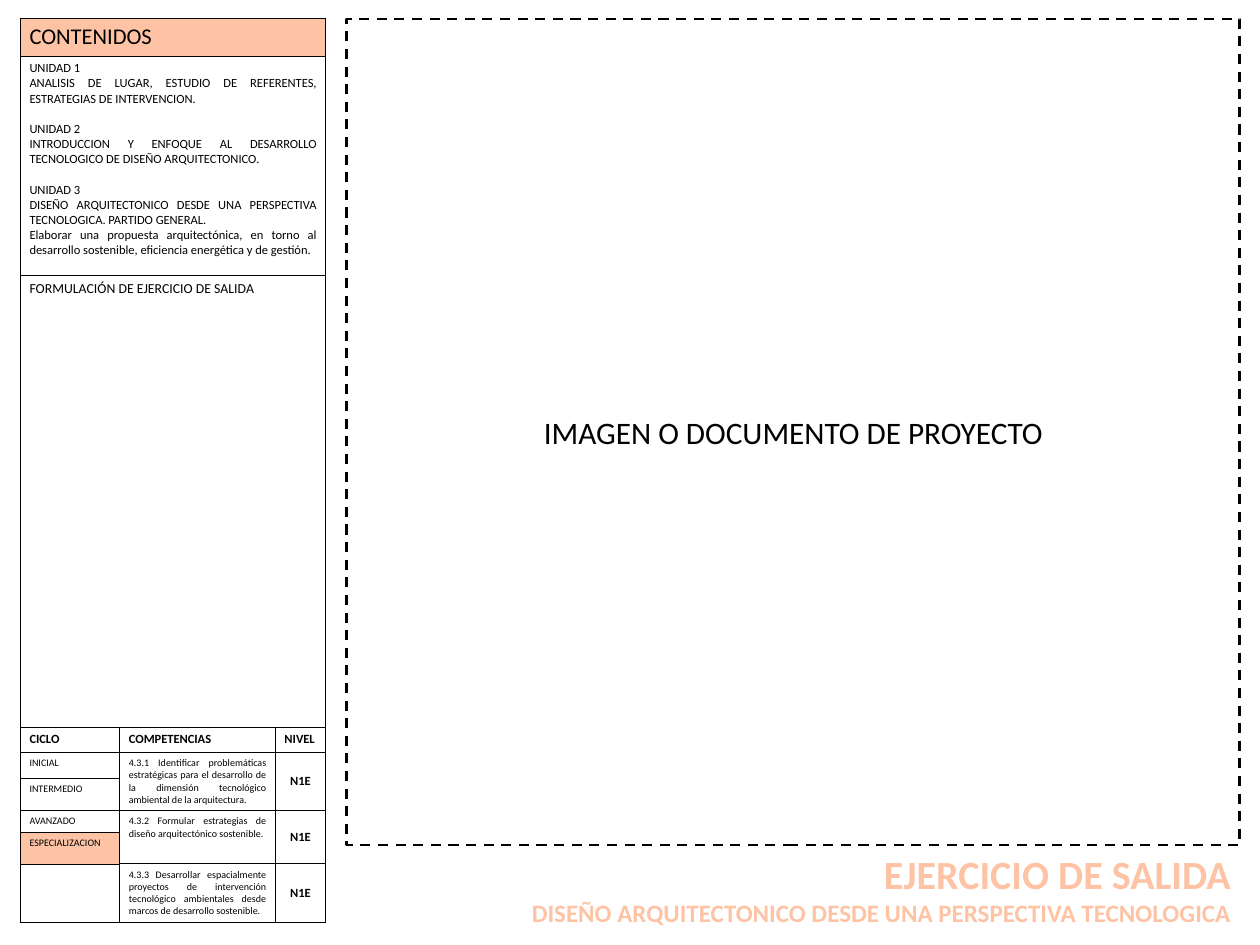
from dataclasses import dataclass
from typing import Optional

from lxml.etree import SubElement
from pptx import Presentation
from pptx.dml.color import RGBColor
from pptx.enum.dml import MSO_LINE
from pptx.enum.shapes import MSO_SHAPE
from pptx.enum.text import MSO_ANCHOR, PP_ALIGN
from pptx.oxml.ns import qn
from pptx.util import Pt

BLACK = "000000"
PEACH = "FDC3A4"
FONT = "Calibri"
UNIT_GAP = 12.2


@dataclass
class Line:
    text: str
    size: float
    bold: bool = False
    align: PP_ALIGN = PP_ALIGN.JUSTIFY
    color: str = BLACK
    space_before: float = 0


@dataclass
class CellContent:
    row: int
    column: int
    lines: list[Line]
    row_span: int = 1
    column_span: int = 1
    fill: Optional[str] = None
    anchor: MSO_ANCHOR = MSO_ANCHOR.TOP


def rgb(value: str) -> RGBColor:
    return RGBColor.from_string(value)


def write_lines(text_frame, lines: list[Line]) -> None:
    for index, line in enumerate(lines):
        paragraph = text_frame.paragraphs[0] if index == 0 else text_frame.add_paragraph()
        paragraph.text = line.text
        paragraph.alignment = line.align
        paragraph.space_before = Pt(line.space_before)
        paragraph.font.name = FONT
        paragraph.font.size = Pt(line.size)
        paragraph.font.bold = line.bold
        paragraph.font.color.rgb = rgb(line.color)


def set_borders(cell, top: float, bottom: float) -> None:
    properties = cell._tc.get_or_add_tcPr()
    sides = {"a:lnL": 1, "a:lnR": 1, "a:lnT": top, "a:lnB": bottom}
    for position, (tag, width) in enumerate(sides.items()):
        border = SubElement(properties, qn(tag), w=str(int(Pt(width))))
        fill = SubElement(border, qn("a:solidFill"))
        SubElement(fill, qn("a:srgbClr"), val=BLACK)
        properties.insert(position, border)


def fill_cell(table, content: CellContent) -> None:
    cell = table.cell(content.row, content.column)
    if content.row_span > 1 or content.column_span > 1:
        cell.merge(table.cell(content.row + content.row_span - 1,
                              content.column + content.column_span - 1))
    cell.vertical_anchor = content.anchor
    write_lines(cell.text_frame, content.lines)
    if content.fill:
        cell.fill.solid()
        cell.fill.fore_color.rgb = rgb(content.fill)


def add_contents_table(slide, contents: list[CellContent]) -> None:
    widths = [79.5, 124.5, 40]
    heights = [30.4, 175.2, 361.6, 20, 20.8, 25.6, 16.8, 25.6, 45.6]
    table = slide.shapes.add_table(len(heights), len(widths), Pt(16.4), Pt(14.8),
                                   Pt(sum(widths)), Pt(sum(heights))).table
    table.first_row = table.horz_banding = False
    for column, width in zip(table.columns, widths):
        column.width = Pt(width)
    for row, height in zip(table.rows, heights):
        row.height = Pt(height)

    # Thin rules divide the units from the exercise, and the cycles from each other
    thin_below = {(1, column) for column in range(3)} | {(row, 0) for row in range(4, 9)}
    for row in range(len(heights)):
        for column in range(len(widths)):
            cell = table.cell(row, column)
            cell.fill.background()
            set_borders(cell, 0.5 if (row - 1, column) in thin_below else 1,
                        0.5 if (row, column) in thin_below else 1)
    for content in contents:
        fill_cell(table, content)


def table_contents() -> list[CellContent]:
    units = [
        ["UNIDAD 1",
         "ANALISIS DE LUGAR, ESTUDIO DE REFERENTES, ESTRATEGIAS DE INTERVENCION."],
        ["UNIDAD 2",
         "INTRODUCCION Y ENFOQUE AL DESARROLLO TECNOLOGICO DE DISEÑO ARQUITECTONICO."],
        ["UNIDAD 3",
         "DISEÑO ARQUITECTONICO DESDE UNA PERSPECTIVA TECNOLOGICA. PARTIDO GENERAL.",
         "Elaborar una propuesta arquitectónica, en torno al desarrollo sostenible, "
         "eficiencia energética y de gestión."],
    ]
    unit_lines = [
        Line(text, 10, space_before=UNIT_GAP if number and not position else 0)
        for number, unit in enumerate(units) for position, text in enumerate(unit)
    ]
    contents = [
        CellContent(0, 0, [Line("CONTENIDOS", 18)], column_span=3, fill=PEACH),
        CellContent(1, 0, unit_lines, column_span=3),
        CellContent(2, 0, [Line("FORMULACIÓN DE EJERCICIO DE SALIDA", 11)], column_span=3),
    ]
    for column, heading in enumerate(["CICLO", "COMPETENCIAS", "NIVEL"]):
        contents.append(CellContent(3, column, [Line(heading, 10, bold=True)]))

    # Cycles, with the current one highlighted
    cycles = ["INICIAL", "INTERMEDIO", "AVANZADO", "ESPECIALIZACION"]
    for row, cycle in enumerate(cycles, start=4):
        contents.append(CellContent(row, 0, [Line(cycle, 8)],
                                    fill=PEACH if cycle == cycles[-1] else None))

    # Competences and their level
    competences = [
        (4, 2, 0, "4.3.1 Identificar problemáticas estratégicas para el desarrollo de la "
                  "dimensión tecnológico ambiental de la arquitectura."),
        (6, 2, 0, "4.3.2 Formular estrategias de diseño arquitectónico sostenible."),
        (8, 1, 6, "4.3.3 Desarrollar espacialmente proyectos de intervención tecnológico "
                  "ambientales desde marcos de desarrollo sostenible."),
    ]
    for row, span, space, text in competences:
        contents.append(CellContent(row, 1, [Line(text, 8, space_before=space)], row_span=span))
        contents.append(CellContent(row, 2, [Line("N1E", 10, True, PP_ALIGN.CENTER)],
                                    row_span=span, anchor=MSO_ANCHOR.MIDDLE))
    return contents


def add_title(slide) -> None:
    title = slide.shapes.add_textbox(Pt(316), Pt(676), Pt(676), Pt(70.6))
    title.text_frame.word_wrap = True
    write_lines(title.text_frame, [
        Line("EJERCICIO DE SALIDA", 32, True, PP_ALIGN.RIGHT, PEACH),
        Line("DISEÑO ARQUITECTONICO DESDE UNA PERSPECTIVA TECNOLOGICA", 20, True,
             PP_ALIGN.RIGHT, PEACH),
    ])


def add_project_frame(slide) -> None:
    frame = slide.shapes.add_shape(MSO_SHAPE.RECTANGLE, Pt(277.2), Pt(15.1), Pt(714.6), Pt(661))
    frame.shadow.inherit = False
    frame.fill.background()
    frame.line.color.rgb = rgb(BLACK)
    frame.line.width = Pt(2)
    frame.line.dash_style = MSO_LINE.DASH
    frame.text_frame.word_wrap = True
    frame.text_frame.vertical_anchor = MSO_ANCHOR.MIDDLE
    write_lines(frame.text_frame,
                [Line("IMAGEN O DOCUMENTO DE PROYECTO", 25, align=PP_ALIGN.CENTER)])


def main() -> None:
    presentation = Presentation()
    presentation.slide_width = Pt(1008)
    presentation.slide_height = Pt(756)
    slide = presentation.slides.add_slide(presentation.slide_layouts[6])
    add_contents_table(slide, table_contents())
    add_title(slide)
    add_project_frame(slide)
    presentation.save("out.pptx")


if __name__ == "__main__":
    main()
